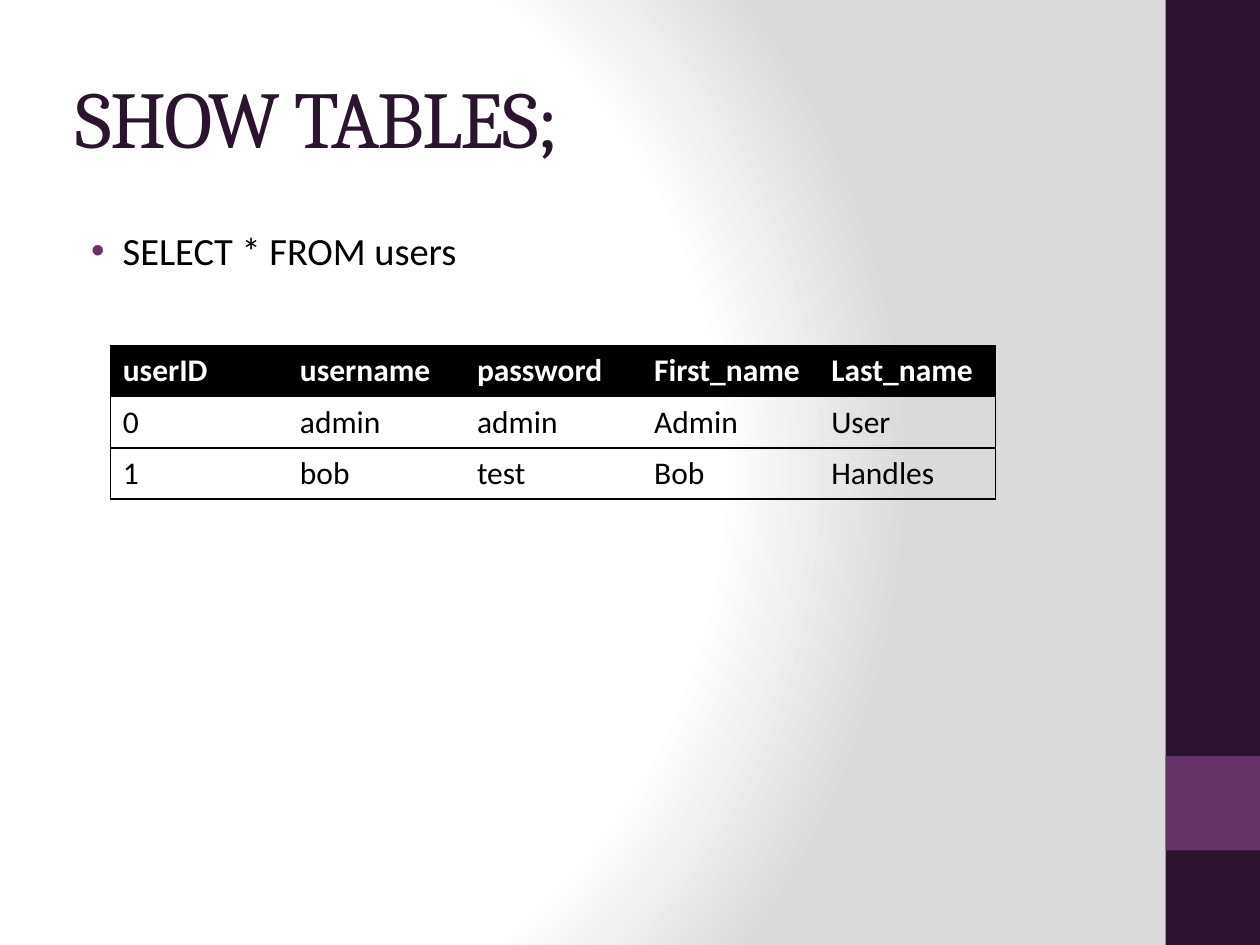
from dataclasses import dataclass

from lxml.etree import SubElement
from pptx import Presentation
from pptx.dml.color import RGBColor
from pptx.enum.shapes import MSO_SHAPE
from pptx.enum.text import MSO_ANCHOR
from pptx.oxml import parse_xml
from pptx.oxml.ns import nsdecls, qn
from pptx.util import Pt

BLACK = RGBColor(0x00, 0x00, 0x00)
WHITE = RGBColor(0xFF, 0xFF, 0xFF)
GRAY = RGBColor(0xDA, 0xDA, 0xDA)
DARK = RGBColor(0x2B, 0x14, 0x2D)
PURPLE = RGBColor(0x66, 0x33, 0x66)

HEADING, BODY = "Cambria", "Calibri"
NO_STYLE = "{2D5ABB26-0587-4C30-8999-92F81FD0307C}"
BACKGROUND_STOPS = [(0, WHITE), (75, WHITE), (100, GRAY)]
USERS = [
    ["userID", "username", "password", "First_name", "Last_name"],
    ["0", "admin", "admin", "Admin", "User"],
    ["1", "bob", "test", "Bob", "Handles"],
]


@dataclass(frozen=True)
class Box:
    left: float
    top: float
    width: float
    height: float

    def lengths(self) -> tuple:
        return tuple(Pt(v) for v in (self.left, self.top, self.width, self.height))


@dataclass(frozen=True)
class Band:
    box: Box
    color: RGBColor


BANDS = [
    Band(Box(666, 0, 54, 540), DARK),
    Band(Box(666, 432, 54, 54), PURPLE),
]


def set_background(slide) -> None:
    slide.background.fill.solid()
    bg = slide.element.find(".//" + qn("p:bgPr"))
    stops = "".join(
        f'<a:gs pos="{pos * 1000}"><a:srgbClr val="{color}"/></a:gs>'
        for pos, color in BACKGROUND_STOPS
    )
    gradient = parse_xml(
        f'<a:gradFill {nsdecls("a")} rotWithShape="1"><a:gsLst>{stops}</a:gsLst>'
        '<a:path path="circle"><a:fillToRect l="20000" t="50000" r="100000" b="50000"/>'
        "</a:path></a:gradFill>"
    )
    bg.replace(bg[0], gradient)


def add_band(slide, band: Band) -> None:
    sp = slide.shapes.add_shape(MSO_SHAPE.RECTANGLE, *band.box.lengths())
    sp.shadow.inherit = False
    sp.fill.solid()
    sp.fill.fore_color.rgb = band.color
    sp.line.fill.background()


def write_text(tf, text: str, *, size: float, color: RGBColor, font: str = BODY,
               bold: bool = False, spacing: float = 0):
    p = tf.paragraphs[0]
    r = p.add_run()
    r.text = text
    r.font.name = font
    r.font.size = Pt(size)
    r.font.bold = bold
    r.font.color.rgb = color
    if spacing:
        r.font._element.set("spc", str(round(spacing * 100)))
    return p


def add_text_frame(slide, box: Box, anchor: MSO_ANCHOR):
    tf = slide.shapes.add_textbox(*box.lengths()).text_frame
    tf.word_wrap = True
    tf.vertical_anchor = anchor
    return tf


def add_bullet(p, color: RGBColor, left: float, indent: float) -> None:
    pPr = p._p.get_or_add_pPr()
    pPr.set("marL", str(Pt(left)))
    pPr.set("indent", str(Pt(indent)))
    SubElement(SubElement(pPr, qn("a:buClr")), qn("a:srgbClr"), val=str(color))
    SubElement(pPr, qn("a:buFont"), typeface="Arial")
    SubElement(pPr, qn("a:buChar"), char="•")


def add_borders(cell, sides: str) -> None:
    tcPr = cell._tc.get_or_add_tcPr()
    for side in sides:
        ln = SubElement(tcPr, qn(f"a:ln{side}"), w=str(Pt(1)))
        fill = SubElement(ln, qn("a:solidFill"))
        SubElement(fill, qn("a:srgbClr"), val=str(BLACK))


def add_table(slide, box: Box, rows: list[list[str]]) -> None:
    n_rows, n_cols = len(rows), len(rows[0])
    frame = slide.shapes.add_table(n_rows, n_cols, *box.lengths())
    table = frame.table
    table.first_row = table.horz_banding = False
    table._tbl.tblPr.find(qn("a:tableStyleId")).text = NO_STYLE
    for col in table.columns:
        col.width = Pt(box.width / n_cols)
    for row in table.rows:
        row.height = Pt(box.height / n_rows)

    for i, values in enumerate(rows):
        header = i == 0
        for j, value in enumerate(values):
            cell = table.cell(i, j)
            # Outer frame plus a rule above and below each row
            sides = ("L" if j == 0 else "") + ("R" if j == n_cols - 1 else "") + "TB"
            add_borders(cell, sides)
            if header:
                cell.fill.solid()
                cell.fill.fore_color.rgb = BLACK
            else:
                cell.fill.background()
            write_text(cell.text_frame, value, size=18, bold=header,
                       color=WHITE if header else BLACK)


def main() -> None:
    prs = Presentation()
    prs.slide_width, prs.slide_height = Pt(720), Pt(540)
    s = prs.slides.add_slide(prs.slide_layouts[6])

    # Background and side bands
    set_background(s)
    for band in BANDS:
        add_band(s, band)

    # Title
    tf = add_text_frame(s, Box(36, 21.6, 600, 90), MSO_ANCHOR.MIDDLE)
    write_text(tf, "SHOW TABLES;", size=46, color=DARK, font=HEADING, spacing=-1)

    # Query
    tf = add_text_frame(s, Box(36, 126, 600, 378), MSO_ANCHOR.TOP)
    p = write_text(tf, "SELECT * FROM users", size=22, color=BLACK)
    p.space_before = Pt(4.4)
    add_bullet(p, PURPLE, left=27, indent=-18)

    # Query result
    add_table(s, Box(63, 197.5, 506, 87.6), USERS)

    prs.save("out.pptx")


if __name__ == "__main__":
    main()
